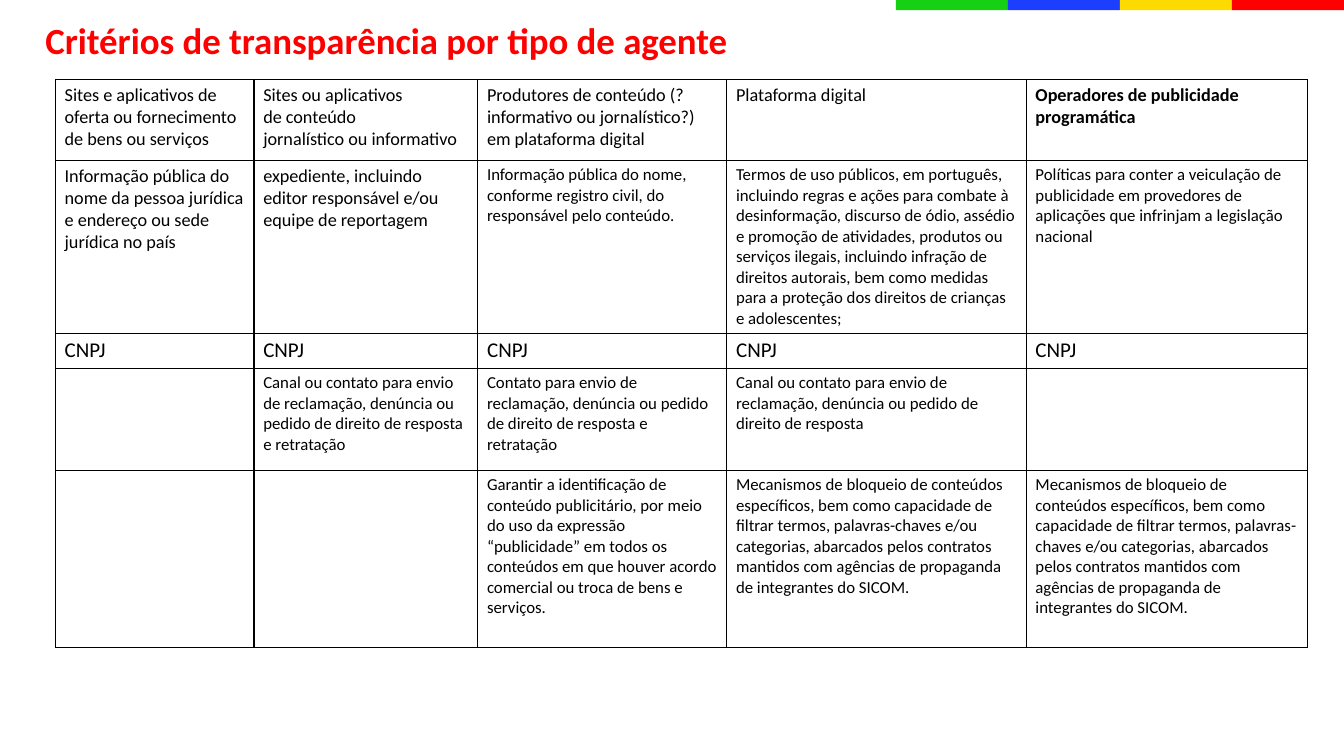
from lxml import etree
from pptx import Presentation
from pptx.dml.color import RGBColor
from pptx.enum.shapes import MSO_SHAPE
from pptx.enum.text import MSO_ANCHOR
from pptx.oxml.ns import qn
from pptx.util import Inches, Pt

RECTANGLE = MSO_SHAPE.RECTANGLE
MIDDLE = MSO_ANCHOR.MIDDLE
COLORS = {"green": "15D013", "blue": "1C3EFE", "yellow": "FDDB00", "red": "FF0000", "black": "000000"}
COLUMN_WIDTHS = [1.97, 2.22, 2.47, 2.97, 2.79]
ROW_HEIGHTS = [0.8, 1.64, 0.32, 1.01, 1.76]
ROW_SIZES = [13, 12, 15, 12, 12]
LARGER_CELLS = {(1, 0): 13, (1, 1): 13}
BOLD_CELL = (0, 4)
CELL_MARGINS = {"margin_left": Pt(6.6), "margin_right": Pt(6.6), "margin_top": Pt(3.3), "margin_bottom": Pt(3.3)}
BLOCKING = (
    "Mecanismos de bloqueio de conteúdos específicos, bem como capacidade de filtrar termos, "
    "palavras-chaves e/ou categorias, abarcados pelos contratos mantidos com agências de "
    "propaganda de integrantes do SICOM."
)
CRITERIA = [
    [
        "Sites e aplicativos de oferta ou fornecimento de bens ou serviços",
        "Sites ou aplicativos\nde conteúdo\njornalístico ou informativo",
        "Produtores de conteúdo (?informativo ou jornalístico?) em plataforma digital",
        "Plataforma digital",
        "Operadores de publicidade programática",
    ],
    [
        "Informação pública do nome da pessoa jurídica e endereço ou sede jurídica no país",
        "expediente, incluindo editor responsável e/ou equipe de reportagem",
        "Informação pública do nome, conforme registro civil, do responsável pelo conteúdo.",
        "Termos de uso públicos, em português, incluindo regras e ações para combate à "
        "desinformação, discurso de ódio, assédio e promoção de atividades, produtos ou "
        "serviços ilegais, incluindo infração de direitos autorais, bem como medidas para "
        "a proteção dos direitos de crianças e adolescentes;",
        "Políticas para conter a veiculação de publicidade em provedores de aplicações que "
        "infrinjam a legislação nacional",
    ],
    ["CNPJ"] * len(COLUMN_WIDTHS),
    [
        "",
        "Canal ou contato para envio de reclamação, denúncia ou pedido de direito de resposta e retratação",
        "Contato para envio de reclamação, denúncia ou pedido de direito de resposta e retratação",
        "Canal ou contato para envio de reclamação, denúncia ou pedido de direito de resposta",
        "",
    ],
    [
        "",
        "",
        "Garantir a identificação de conteúdo publicitário, por meio do uso da expressão "
        "“publicidade” em todos os conteúdos em que houver acordo comercial ou troca de bens e serviços.",
        BLOCKING,
        BLOCKING,
    ],
]


def format_text(paragraph, size, color, bold):
    for name, value in {"name": "Calibri", "size": Pt(size), "bold": bold}.items():
        setattr(paragraph.font, name, value)
    paragraph.font.color.rgb = RGBColor.from_string(COLORS[color])


def add_borders(cell):
    properties = cell._tc.get_or_add_tcPr()
    for position, side in enumerate(("lnL", "lnR", "lnT", "lnB")):
        line = etree.Element(qn(f"a:{side}"), w=str(Pt(1)))
        fill = etree.SubElement(line, qn("a:solidFill"))
        etree.SubElement(fill, qn("a:srgbClr"), val=COLORS["black"])
        properties.insert(position, line)


presentation = Presentation()
presentation.slide_width = Inches(13.33)
presentation.slide_height = Inches(7.5)
slide = presentation.slides.add_slide(presentation.slide_layouts[6])

bar_width = presentation.slide_width // 12
for position, color in enumerate(("green", "blue", "yellow", "red")):
    bar = slide.shapes.add_shape(RECTANGLE, bar_width * (8 + position), 0, bar_width, Inches(0.1))
    bar.shadow.inherit = False
    bar.fill.solid()
    bar.fill.fore_color.rgb = RGBColor.from_string(COLORS[color])
    bar.line.fill.background()

frame = slide.shapes.add_table(
    len(ROW_HEIGHTS), len(COLUMN_WIDTHS), Inches(0.55), Inches(0.79),
    Inches(sum(COLUMN_WIDTHS)), Inches(sum(ROW_HEIGHTS)),
)
table = frame.table
table.first_row = False
table.horz_banding = False
for column, width in zip(table.columns, COLUMN_WIDTHS):
    column.width = Inches(width)
for row, height in zip(table.rows, ROW_HEIGHTS):
    row.height = Inches(height)

for row_index, texts in enumerate(CRITERIA):
    for column_index, text in enumerate(texts):
        place = (row_index, column_index)
        cell = table.cell(*place)
        cell.text = text
        cell.fill.background()
        for name, value in CELL_MARGINS.items():
            setattr(cell, name, value)
        add_borders(cell)
        for paragraph in cell.text_frame.paragraphs:
            format_text(paragraph, LARGER_CELLS.get(place, ROW_SIZES[row_index]), "black", place == BOLD_CELL)

title = slide.shapes.add_textbox(Inches(0.36), Inches(0.16), Inches(8.9), Inches(0.63))
title_format = {"word_wrap": True, "vertical_anchor": MIDDLE, "margin_left": Inches(0.09), "margin_bottom": Inches(0.16)}
for name, value in title_format.items():
    setattr(title.text_frame, name, value)
heading = title.text_frame.paragraphs[0]
heading.text = "Critérios de transparência por tipo de agente"
heading.line_spacing = 0.9
format_text(heading, 26.3, "red", True)

presentation.save("out.pptx")
